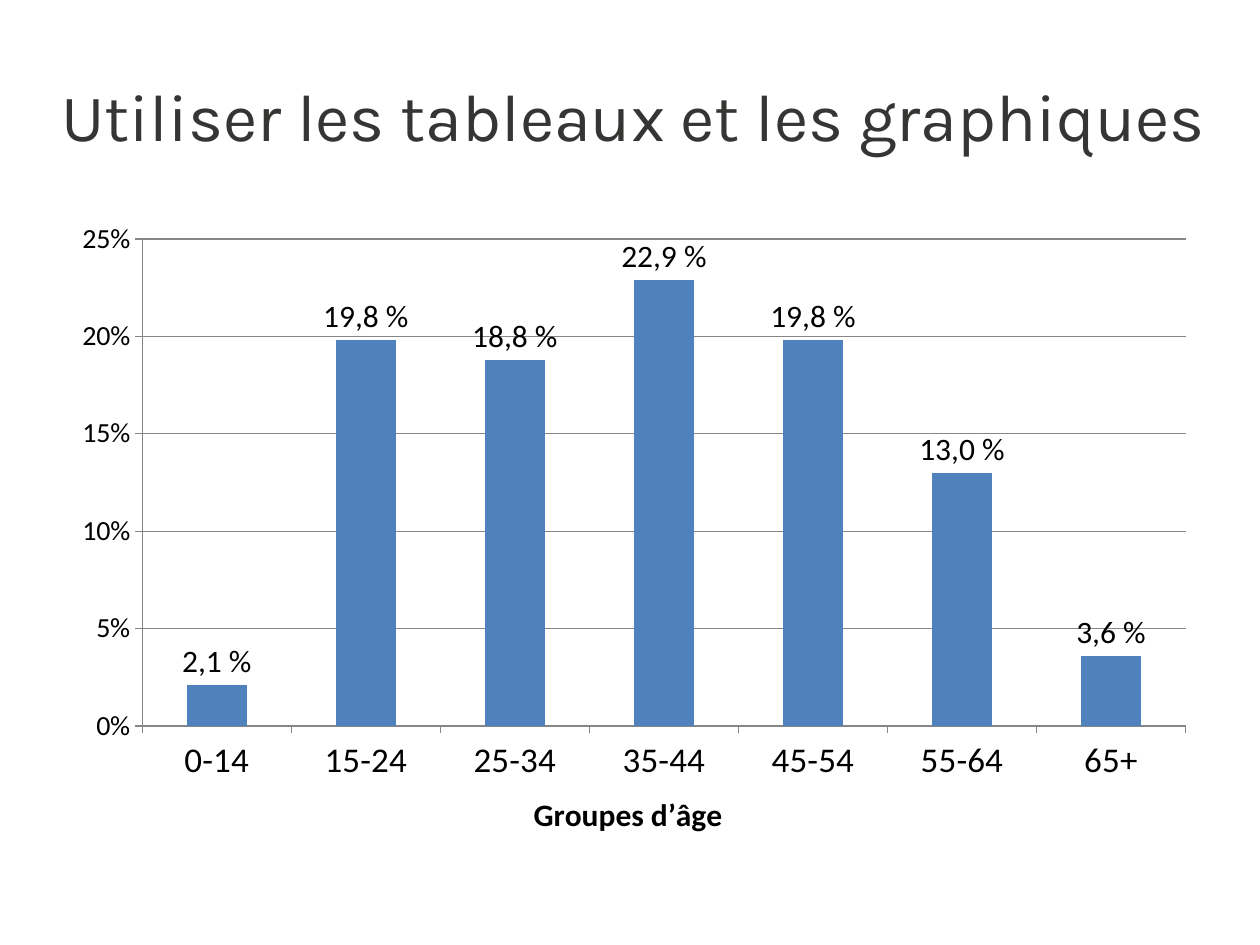
from pptx import Presentation
from pptx.chart.data import CategoryChartData
from pptx.dml.color import RGBColor
from pptx.enum.chart import XL_CHART_TYPE as ChartType, XL_LABEL_POSITION as LabelPos, XL_TICK_MARK as Tick
from pptx.enum.text import MSO_ANCHOR as Anchor, PP_ALIGN as Align
from pptx.oxml import parse_xml
from pptx.oxml.ns import nsdecls, qn
from pptx.util import Inches, Pt

COLORS = {"title": "353634", "text": "000000", "bar": "4F81BD", "line": "868686"}
AGE_SHARES = {
    "0-14": 0.021, "15-24": 0.198, "25-34": 0.188, "35-44": 0.229,
    "45-54": 0.198, "55-64": 0.13, "65+": 0.036,
}


def color(name):
    return RGBColor.from_string(COLORS[name])


def style_font(font, name, size, tone, bold=False):
    font.name, font.size, font.bold = name, Pt(size), bold
    font.color.rgb = color(tone)


def style_line(line):
    line.color.rgb = color("line")
    line.width = Pt(0.75)


def set_layout(parent, index, **values):
    for old in parent.findall(qn("c:layout")):
        parent.remove(old)
    modes = "".join(f'<c:{k}Mode val="edge"/>' for k in "xy")
    sizes = "".join(f'<c:{k} val="{v}"/>' for k, v in values.items())
    target = '<c:layoutTarget val="inner"/>' if "w" in values else ""
    parent.insert(index, parse_xml(
        f'<c:layout {nsdecls("c")}><c:manualLayout>{target}{modes}{sizes}'
        '</c:manualLayout></c:layout>'))


def add_title(s, x, y, w, h):
    tf = s.shapes.add_textbox(x, y, w, h).text_frame
    tf.word_wrap = True
    tf.vertical_anchor = Anchor.MIDDLE
    p = tf.paragraphs[0]
    p.alignment = Align.CENTER
    r = p.add_run()
    r.text = "Utiliser les tableaux et les graphiques"
    style_font(r.font, "Karla", 38, "title")


def add_caption(chart):
    chart.has_title = True
    title = chart.chart_title
    title.include_in_layout = False
    r = title.text_frame.paragraphs[0].add_run()
    r.text = "Groupes d’âge"
    style_font(r.font, "Calibri", 18, "text", bold=True)
    set_layout(title._element, 1, x=0.41, y=0.92)


def style_axes(chart):
    for axis, size in ((chart.category_axis, 20), (chart.value_axis, 16)):
        axis.major_tick_mark = Tick.OUTSIDE
        axis.minor_tick_mark = Tick.NONE
        style_font(axis.tick_labels.font, "Calibri", size, "text")
        style_line(axis.format.line)
    axis = chart.value_axis
    axis.minimum_scale, axis.maximum_scale, axis.major_unit = 0, 0.25, 0.05
    axis.tick_labels.number_format = "0%"
    axis.tick_labels.number_format_is_linked = False
    axis.has_major_gridlines = True
    style_line(axis.major_gridlines.format.line)


def style_bars(plot):
    plot.gap_width = 150
    plot.vary_by_categories = False
    series = plot.series[0]
    series.format.fill.solid()
    series.format.fill.fore_color.rgb = color("bar")
    for i, share in enumerate(AGE_SHARES.values()):
        label = series.points[i].data_label
        r = label.text_frame.paragraphs[0].add_run()
        r.text = f"{share * 100:.1f} %".replace(".", ",")
        style_font(r.font, "Calibri", 18, "text")
        label.position = LabelPos.OUTSIDE_END


def add_age_chart(s, x, y, w, h):
    data = CategoryChartData(number_format="0.0%")
    data.categories = list(AGE_SHARES)
    data.add_series("Series 1", list(AGE_SHARES.values()))
    chart = s.shapes.add_chart(ChartType.COLUMN_CLUSTERED, x, y, w, h, data).chart
    chart.has_legend = False
    style_font(chart.font, "Calibri", 10, "text")
    add_caption(chart)
    style_axes(chart)
    style_bars(chart.plots[0])
    plot_area = chart._chartSpace.find(f"{qn('c:chart')}/{qn('c:plotArea')}")
    set_layout(plot_area, 0, x=0.07, y=0.03, w=0.92, h=0.79)


def main():
    prs = Presentation()
    prs.slide_width, prs.slide_height = Inches(10), Inches(7.5)
    s = prs.slides.add_slide(prs.slide_layouts[6])
    add_title(s, Inches(0.16), Inches(0.29), Inches(9.74), Inches(1.25))
    add_age_chart(s, Inches(0.5), Inches(1.75), Inches(9), Inches(4.95))
    prs.save("out.pptx")


if __name__ == "__main__":
    main()
